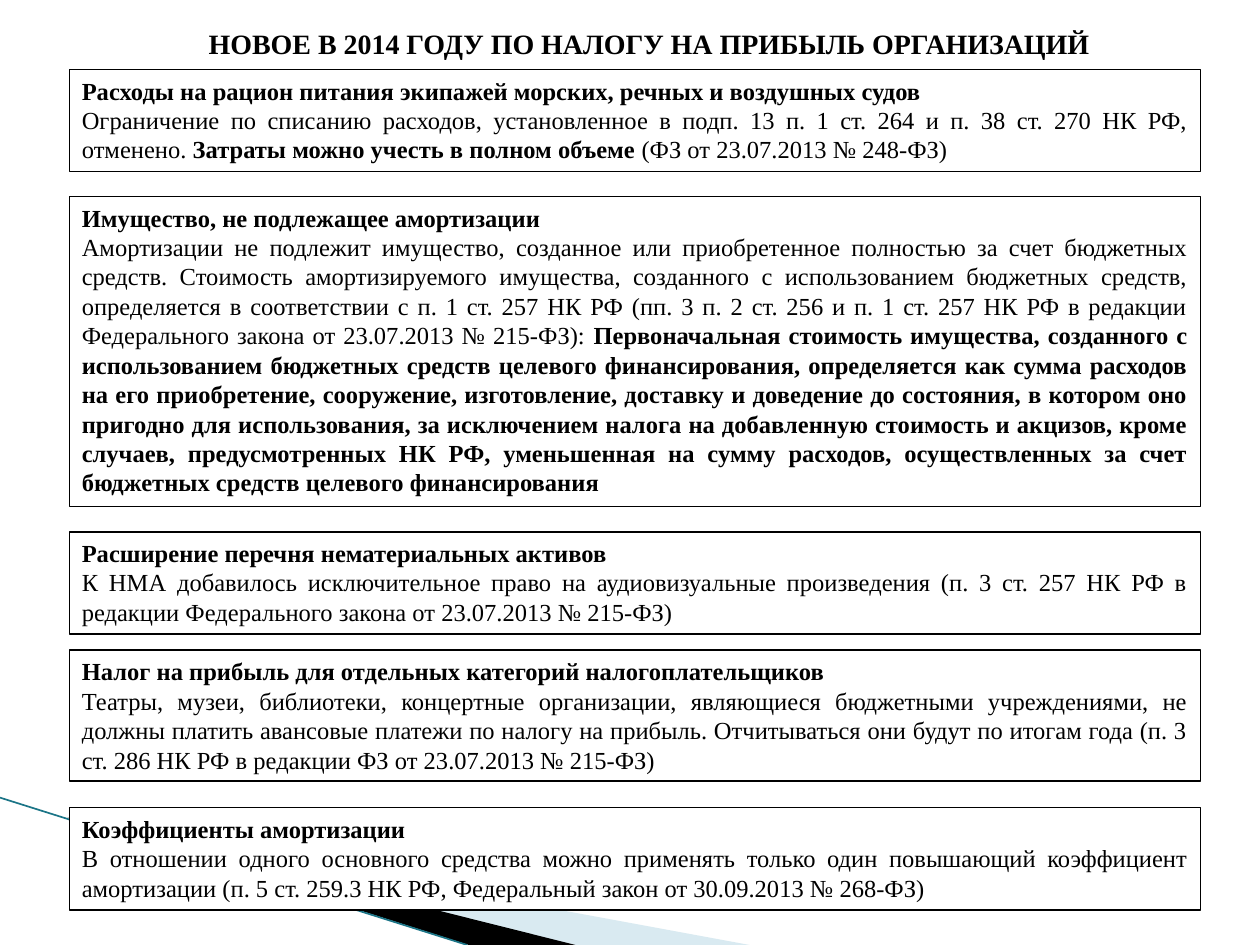
from lxml.etree import SubElement
from pptx import Presentation
from pptx.dml.color import RGBColor
from pptx.enum.shapes import MSO_CONNECTOR, MSO_SHAPE
from pptx.enum.text import MSO_ANCHOR, MSO_AUTO_SIZE, PP_ALIGN
from pptx.oxml.ns import qn
from pptx.util import Cm, Pt

COLORS = {"text": "000000", "paper": "FFFFFF", "wave": "A0CBDC", "edge": "1B7587"}
FRAME = {"word_wrap": True, "vertical_anchor": MSO_ANCHOR.TOP,
         "auto_size": MSO_AUTO_SIZE.SHAPE_TO_FIT_TEXT}
LEFT, WIDTH = Cm(1.4), Cm(22.8)


def color(name):
    return RGBColor.from_string(COLORS[name])


def add_run(paragraph, text, size, bold):
    run = paragraph.add_run()
    run.text = text
    for key, value in {"name": "Times New Roman", "size": Pt(size), "bold": bold}.items():
        setattr(run.font, key, value)
    run.font.color.rgb = color("text")


prs = Presentation()
prs.slide_width, prs.slide_height = Cm(25.4), Cm(19.05)
slide = prs.slides.add_slide(prs.slide_layouts[5])

waves = [
    ("wave", 40, [(1.4, 16.52), (15.11, 19.05), (11.58, 19.05)]),
    ("text", 100, [(1.36, 16.48), (11.6, 19.05), (9.45, 19.05)]),
]
for name, opacity, corners in waves:
    points = [(Cm(x), Cm(y)) for x, y in corners]
    builder = slide.shapes.build_freeform(*points[0])
    builder.add_line_segments(points[1:], close=True)
    wave = builder.convert_to_shape()
    wave.shadow.inherit = False
    wave.fill.solid()
    wave.fill.fore_color.rgb = color(name)
    wave.line.fill.background()
    if opacity < 100:
        fill_color = wave.fill._xPr.find(qn("a:solidFill"))[0]
        SubElement(fill_color, qn("a:alpha"), val=str(opacity * 1000))

edge = slide.shapes.add_connector(MSO_CONNECTOR.STRAIGHT, Cm(0), Cm(16.08), Cm(9.42), Cm(19.05))
edge.line.color.rgb = color("edge")
edge.line.width = Pt(0.95)
SubElement(edge._element.spPr, qn("a:effectLst"))

heading = slide.shapes.title
heading.left, heading.top, heading.width, heading.height = Cm(1.98), Cm(0.4), Cm(22.22), Cm(0.94)
for key, value in FRAME.items():
    setattr(heading.text_frame, key, value)
heading_line = heading.text_frame.paragraphs[0]
heading_line.alignment = PP_ALIGN.CENTER
add_run(heading_line, "НОВОЕ В 2014 ГОДУ ПО НАЛОГУ НА ПРИБЫЛЬ ОРГАНИЗАЦИЙ", 16, True)

changes = [
    (1.4, 2.06, None, "Расходы на рацион питания экипажей морских, речных и воздушных судов", [
        "Ограничение по списанию расходов, установленное в подп. 13 п. 1 ст. 264 и п. 38 "
        "ст. 270 НК РФ, отменено. ",
        "Затраты можно учесть в полном объеме ",
        "(ФЗ от 23.07.2013 № 248-ФЗ)"]),
    (3.96, 6.25, None, "Имущество, не подлежащее амортизации", [
        "Амортизации не подлежит имущество, созданное или приобретенное полностью за счет "
        "бюджетных средств. Стоимость амортизируемого имущества, созданного с использованием "
        "бюджетных средств, определяется в соответствии с п. 1 ст. 257 НК РФ (пп. 3 п. 2 ст. 256 "
        "и п. 1 ст. 257 НК РФ в редакции Федерального закона от 23.07.2013 № 215-ФЗ): ",
        "Первоначальная стоимость имущества, созданного с использованием бюджетных средств "
        "целевого финансирования, определяется как сумма расходов на его приобретение, "
        "сооружение, изготовление, доставку и доведение до состояния, в котором оно пригодно "
        "для использования, за исключением налога на добавленную стоимость и акцизов, кроме "
        "случаев, предусмотренных НК РФ, уменьшенная на сумму расходов, осуществленных за счет "
        "бюджетных средств целевого финансирования"]),
    (10.72, 2.06, None, "Расширение перечня нематериальных активов", [
        "К НМА добавилось исключительное право на аудиовизуальные произведения (п. 3 ст. 257 "
        "НК РФ в редакции Федерального закона от 23.07.2013 № 215-ФЗ)"]),
    (13.11, 2.64, None, "Налог на прибыль для отдельных категорий налогоплательщиков", [
        "Театры, музеи, библиотеки, концертные организации, являющиеся бюджетными учреждениями, "
        "не должны платить авансовые платежи по налогу на прибыль. Отчитываться они будут по "
        "итогам года (п. 3 ст. 286 НК РФ в редакции ФЗ от 23.07.2013 № 215-ФЗ)"]),
    (16.28, 2.06, "paper", "Коэффициенты амортизации", [
        "В отношении одного основного средства можно применять только один повышающий "
        "коэффициент амортизации (п. 5 ст. 259.3 НК РФ, Федеральный закон от 30.09.2013 "
        "№ 268-ФЗ)"]),
]
for top, height, background, topic, details in changes:
    change = slide.shapes.add_shape(MSO_SHAPE.RECTANGLE, LEFT, Cm(top), WIDTH, Cm(height))
    change.shadow.inherit = False
    if background:
        change.fill.solid()
        change.fill.fore_color.rgb = color(background)
    else:
        change.fill.background()
    change.line.color.rgb = color("text")
    change.line.width = Pt(1)
    for key, value in FRAME.items():
        setattr(change.text_frame, key, value)
    topic_line = change.text_frame.paragraphs[0]
    detail_line = change.text_frame.add_paragraph()
    topic_line.alignment = detail_line.alignment = PP_ALIGN.JUSTIFY
    add_run(topic_line, topic, 14, True)
    for index, detail in enumerate(details):
        add_run(detail_line, detail, 14, index % 2 == 1)

prs.save("out.pptx")
